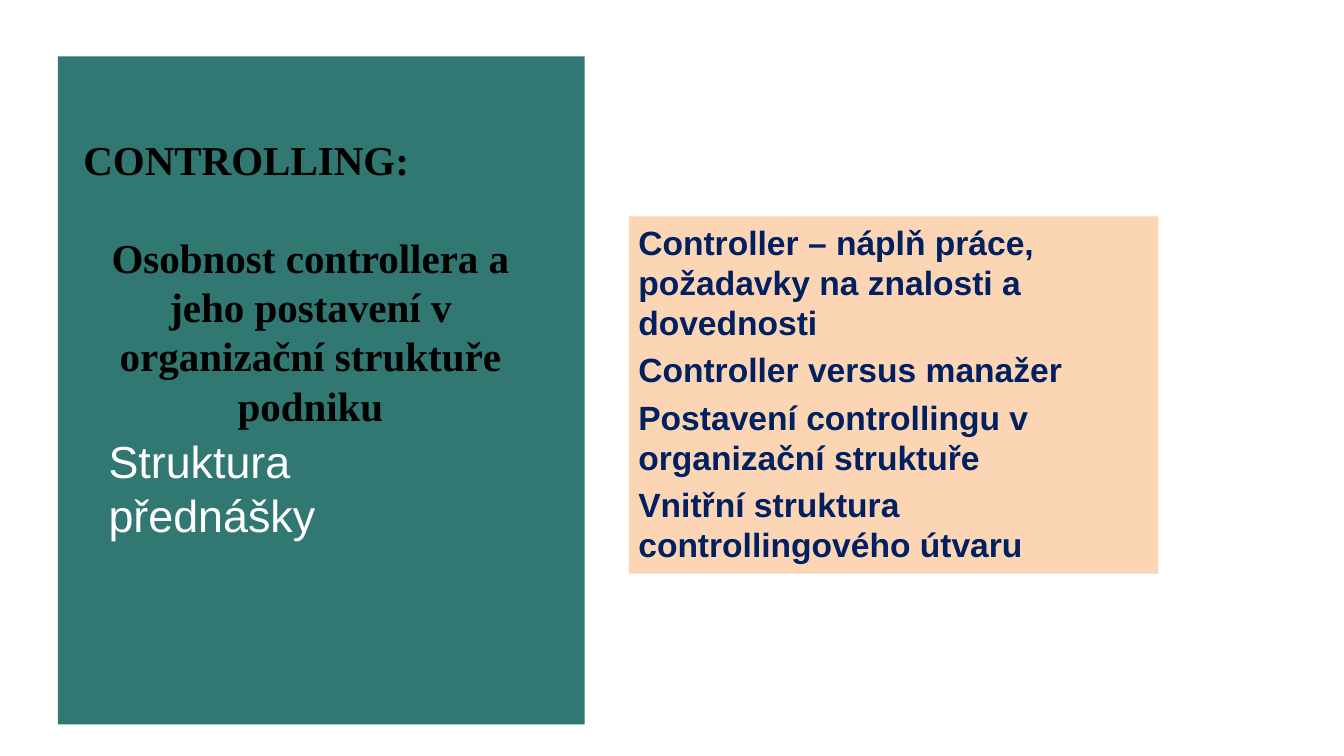
"""Build the lecture outline slide on the controller's role."""
from pptx import Presentation
from pptx import util as u
from pptx.dml.color import RGBColor
from pptx.enum import shapes, text

COLOURS = {"panel": "307871", "outline": "FCD5B5", "navy": "002060",
           "black": "000000", "white": "FFFFFF"}
WIDTH = 10
HEIGHT = WIDTH * 9 / 16
HEADING = "CONTROLLING:"
SUBJECT = "Osobnost controllera a jeho postavení v organizační struktuře podniku"
LABEL = "Struktura přednášky"
TOPICS = ["Controller – náplň práce, požadavky na znalosti a dovednosti",
          "Controller versus manažer",
          "Postavení controllingu v organizační struktuře",
          "Vnitřní struktura controllingového útvaru"]
AREAS = {"panel": (0.43, 0.42, 3.92, 4.97), "title": (0.55, 0.96, 3.52, 1.87),
         "outline": (4.68, 1.61, 3.94, 2.66), "label": (0.71, 3.18, 2.96, 0.91)}


def area(name):
    return [u.Inches(length) for length in AREAS[name]]


def write(shape, paragraphs, *, size, colour, font="Arial", bold=False,
          aligns=(), gap=0, inset=(0.07, 0.04)):
    frame = shape.text_frame
    frame.word_wrap = True
    frame.auto_size = text.MSO_AUTO_SIZE.NONE
    frame.vertical_anchor = text.MSO_ANCHOR.TOP
    frame.margin_left = frame.margin_right = u.Inches(inset[0])
    frame.margin_top = frame.margin_bottom = u.Inches(inset[1])
    for index, words in enumerate(paragraphs):
        paragraph = frame.add_paragraph() if index else frame.paragraphs[0]
        paragraph.alignment = aligns[index] if aligns else text.PP_ALIGN.LEFT
        paragraph.space_before = u.Pt(gap if index else 0)
        run = paragraph.add_run()
        run.text = words
        run.font.name, run.font.size, run.font.bold = font, u.Pt(size), bold
        run.font.color.rgb = RGBColor.from_string(COLOURS[colour])


def add_block(slide, name):
    shape = slide.shapes.add_shape(shapes.MSO_SHAPE.RECTANGLE, *area(name))
    shape.shadow.inherit = False
    shape.fill.solid()
    shape.fill.fore_color.rgb = RGBColor.from_string(COLOURS[name])
    shape.line.fill.background()
    return shape


def main():
    presentation = Presentation()
    presentation.slide_width = u.Inches(WIDTH)
    presentation.slide_height = u.Inches(HEIGHT)
    slide = presentation.slides.add_slide(presentation.slide_layouts[5])

    panel = add_block(slide, "panel")
    title = slide.shapes.title
    panel.element.addnext(title.element)
    title.left, title.top, title.width, title.height = area("title")
    write(title, [HEADING, SUBJECT], size=22, colour="black",
          font="Times New Roman", bold=True, gap=26,
          aligns=(text.PP_ALIGN.LEFT, text.PP_ALIGN.CENTER))

    write(add_block(slide, "outline"), TOPICS, size=18, colour="navy",
          bold=True, gap=3.6)
    label = slide.shapes.add_textbox(*area("label"))
    write(label, [LABEL], size=24, colour="white", inset=(0.1, 0.05))
    presentation.save("out.pptx")


if __name__ == "__main__":
    main()
